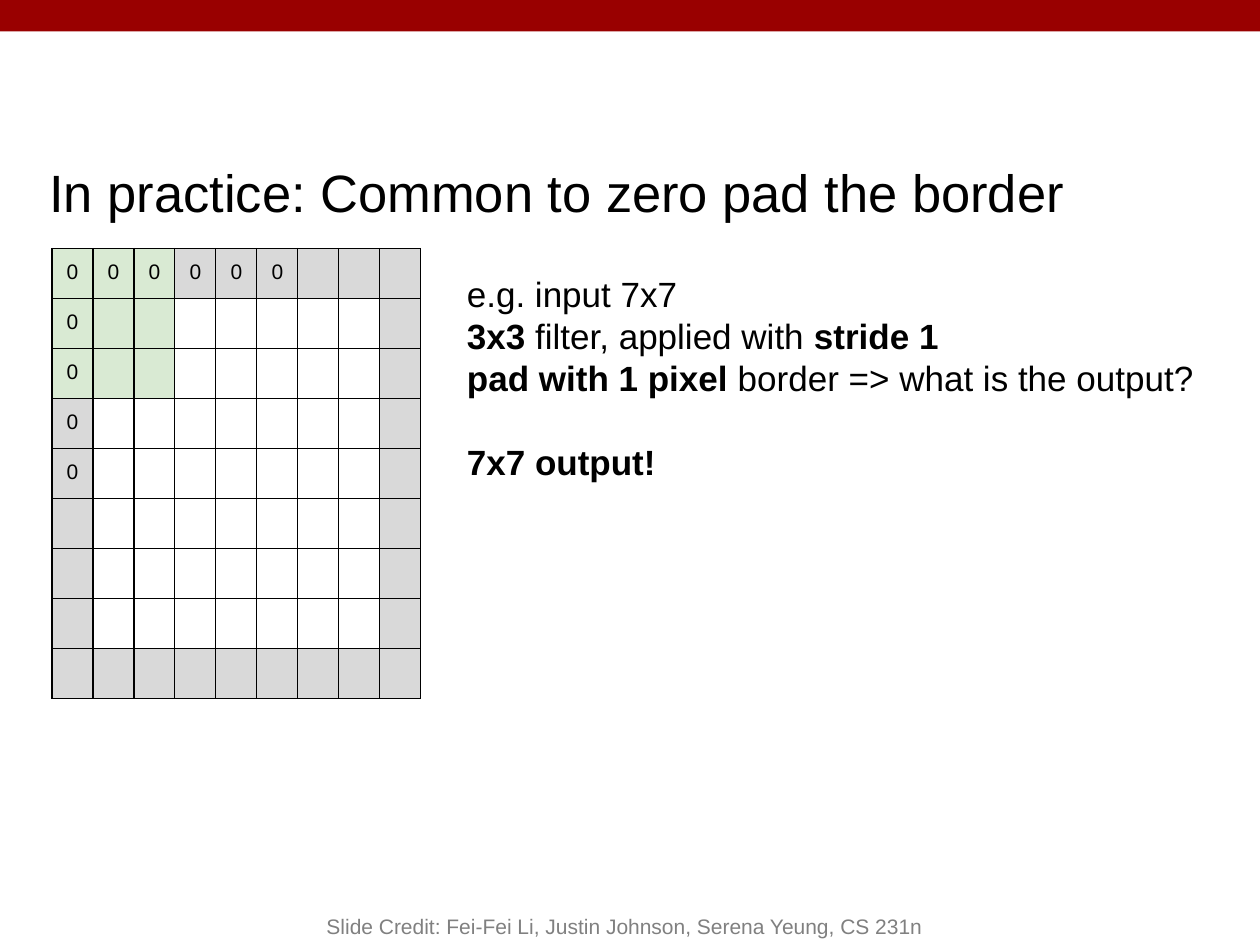
from lxml import etree
from pptx import Presentation
from pptx.dml.color import RGBColor
from pptx.enum import shapes, text
from pptx.oxml import ns
from pptx.util import Pt

COLORS = {
    "banner": "990000",
    "ink": "000000",
    "credit": "808080",
    "filter": "D9EAD3",
    "padding": "D9D9D9",
    "input": "FFFFFF",
}


def add_run(paragraph, words, size, color="ink", bold=False):
    run = paragraph.add_run()
    run.text = words
    run.font.name = "Arial"
    run.font.size = Pt(size)
    run.font.bold = bold
    run.font.color.rgb = RGBColor.from_string(COLORS[color])


def set_frame(shape, box, inset, anchor):
    shape.left, shape.top, shape.width, shape.height = [Pt(v) for v in box]
    frame = shape.text_frame
    frame.word_wrap = True
    frame.auto_size = text.MSO_AUTO_SIZE.NONE
    frame.vertical_anchor = anchor
    frame.margin_left = frame.margin_right = Pt(7.2)
    frame.margin_top = frame.margin_bottom = Pt(inset)
    return frame


prs = Presentation()
prs.slide_width, prs.slide_height = Pt(720), Pt(540)
slide = prs.slides.add_slide(prs.slide_layouts[1])

# Banner across the top
banner = slide.shapes.add_shape(shapes.MSO_SHAPE.RECTANGLE, 0, 0, Pt(720), Pt(18))
banner.shadow.inherit = False
banner.fill.solid()
banner.fill.fore_color.rgb = RGBColor.from_string(COLORS["banner"])
banner.line.fill.background()

# Title
title = set_frame(slide.shapes.title, (21, 84.2, 652.3, 58.3), 7.2, text.MSO_ANCHOR.TOP)
heading = title.paragraphs[0]
heading.alignment = text.PP_ALIGN.LEFT
heading.line_spacing = Pt(36)
add_run(heading, "In practice: Common to zero pad the border", 30)

# Question and answer: (words, bold) runs per line
lines = [
    [("e.g. input 7x7", False)],
    [("3x3", True), (" filter, applied with ", False), ("stride 1", True)],
    [("pad with 1 pixel", True), (" border => what is the output?", False)],
    [("7x7 output!", True)],
]
question = set_frame(slide.placeholders[1], (259.6, 148.3, 460.4, 116.6), 7.2,
                     text.MSO_ANCHOR.TOP)
for i, runs in enumerate(lines):
    line = question.paragraphs[0] if i == 0 else question.add_paragraph()
    line.line_spacing = Pt(24)
    line.space_before = Pt(24 if i == len(lines) - 1 else 0)
    properties = line._p.get_or_add_pPr()
    properties.set("marL", "0")
    properties.set("indent", "0")
    etree.SubElement(properties, ns.qn("a:buNone"))
    for words, bold in runs:
        add_run(line, words, 20, bold=bold)

# Padded input: 7x7 pixels inside a one-pixel border, 3x3 filter at top left
N, FILTER = 9, 3
COLUMN, ROW = 23.43, 27.85
grid = slide.shapes.add_table(N, N, Pt(29.7), Pt(141.9), Pt(N * COLUMN), Pt(N * ROW)).table
grid.first_row = grid.horz_banding = False
for i in range(N):
    grid.columns[i].width = Pt(COLUMN)
    grid.rows[i].height = Pt(ROW)

for row in range(N):
    for col in range(N):
        pixel = grid.cell(row, col)
        pixel.margin_left = pixel.margin_right = Pt(7.2)
        pixel.margin_top = pixel.margin_bottom = Pt(7)
        if row < FILTER and col < FILTER:
            role = "filter"
        elif row in (0, N - 1) or col in (0, N - 1):
            role = "padding"
        else:
            role = "input"

        value = pixel.text_frame.paragraphs[0]
        value.alignment = text.PP_ALIGN.CENTER
        value.font.size = Pt(12)
        if (row == 0 and col < 6) or (col == 0 and row < 5):
            add_run(value, "0", 12)

        # Borders come before the fill in the cell properties
        cell_properties = pixel._tc.get_or_add_tcPr()
        for side in ("lnL", "lnR", "lnT", "lnB"):
            border = etree.SubElement(cell_properties, ns.qn("a:" + side), w=str(Pt(0.75)))
            solid = etree.SubElement(border, ns.qn("a:solidFill"))
            etree.SubElement(solid, ns.qn("a:srgbClr"), val=COLORS["ink"])
        pixel.fill.solid()
        pixel.fill.fore_color.rgb = RGBColor.from_string(COLORS[role])

# Credit line
credit_box = slide.shapes.add_textbox(0, 0, 0, 0)
credit = set_frame(credit_box, (144, 504, 426, 36), 3.6, text.MSO_ANCHOR.BOTTOM)
credit.paragraphs[0].alignment = text.PP_ALIGN.CENTER
add_run(credit.paragraphs[0],
        "Slide Credit: Fei-Fei Li, Justin Johnson, Serena Yeung, CS 231n", 12, "credit")

prs.save("out.pptx")
